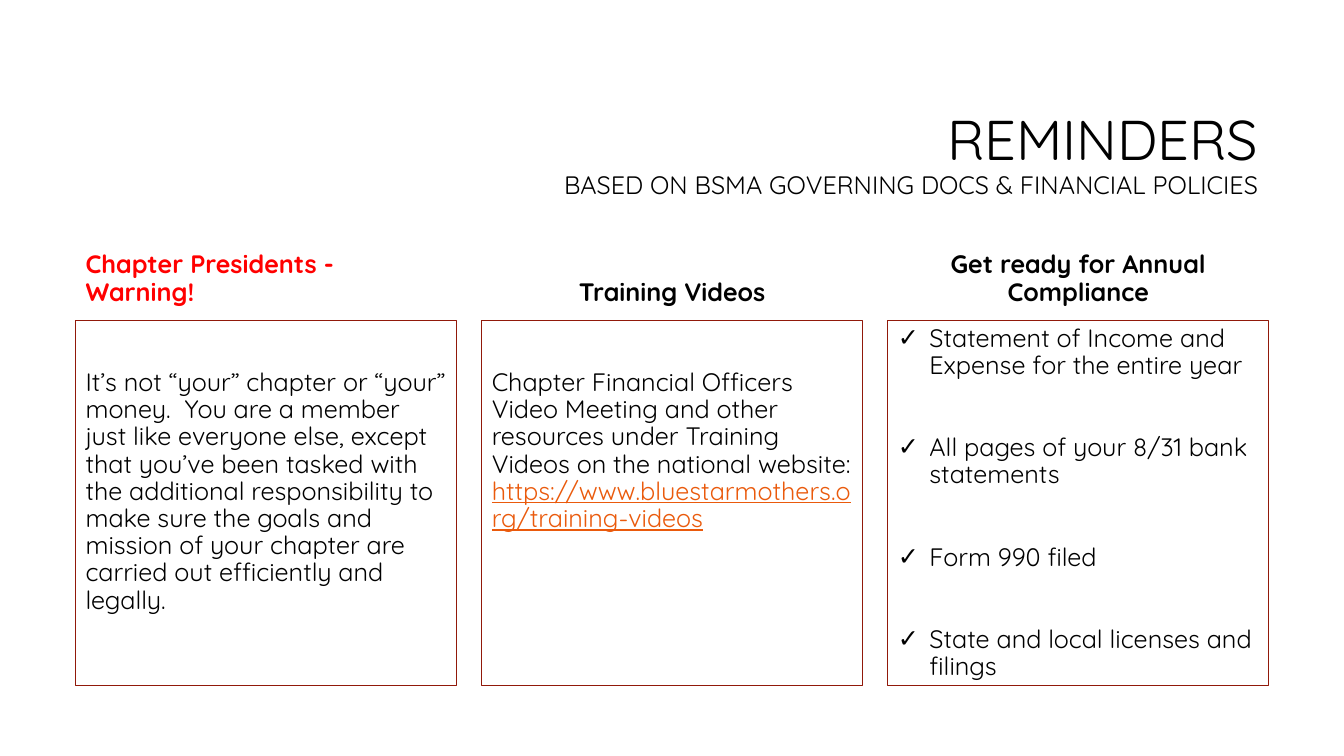
from lxml.etree import SubElement
from pptx import Presentation
from pptx.dml.color import RGBColor
from pptx.enum.text import MSO_ANCHOR as Anchor, MSO_AUTO_SIZE as AutoSize, PP_ALIGN as Align
from pptx.oxml.ns import qn
from pptx.util import Pt

COLORS = {"text": "000000", "warning": "FF0000", "border": "91190A", "link": "EA5A0C"}
FONT = "Quicksand"
COLUMN_LEFT, COLUMN_WIDTH, COLUMN_GAP = 54, 272.1, 18
HEADING_TOP, HEADING_HEIGHT = 173, 49.6
PANEL_TOP, PANEL_HEIGHT = 229, 260.6
BULLET_INDENT = 22.5

COLUMNS = [
    {
        "heading": "Chapter Presidents - Warning!",
        "color": "warning",
        "align": Align.LEFT,
        "paragraphs": [
            "It’s not “your” chapter or “your” money.  You are a member just like "
            "everyone else, except that you’ve been tasked with the additional "
            "responsibility to make sure the goals and mission of your chapter are "
            "carried out efficiently and legally."
        ],
    },
    {
        "heading": "Training Videos",
        "placeholders": (1, 2),
        "paragraphs": [
            "Chapter Financial Officers Video Meeting and other resources under "
            "Training Videos on the national website: "
        ],
        "link": "https://www.bluestarmothers.org/training-videos",
    },
    {
        "heading": "Get ready for Annual Compliance",
        "placeholders": (3, 4),
        "bullet": "✓",
        "paragraphs": [
            "Statement of Income and Expense for the entire year",
            "All pages of your 8/31 bank statements",
            "Form 990 filed",
            "State and local licenses and filings",
        ],
    },
]


def rgb(name):
    """Return the named colour."""
    return RGBColor.from_string(COLORS[name])


def place(slide, index, box, anchor, top_inset=3.6):
    """Position a placeholder, or a new text box if index is None, in the box."""
    if index is None:
        shape = slide.shapes.add_textbox(0, 0, 0, 0)
    else:
        shape = slide.placeholders[index]
    shape.left, shape.top, shape.width, shape.height = map(Pt, box)
    frame = shape.text_frame
    frame.word_wrap = True
    frame.auto_size = AutoSize.NONE
    frame.vertical_anchor = anchor
    frame.margin_left = frame.margin_right = Pt(7.2)
    frame.margin_top, frame.margin_bottom = Pt(top_inset), Pt(3.6)
    return shape


def format_paragraph(paragraph, align, size=18, color="text", bold=False, bullet=None, before=0):
    """Set the bullet, spacing and font of a paragraph."""
    properties = paragraph._p.get_or_add_pPr()
    indent = Pt(BULLET_INDENT) if bullet else 0
    properties.set("marL", str(indent))
    properties.set("indent", str(-indent))
    if bullet:
        SubElement(properties, qn("a:buChar")).set("char", bullet)
    else:
        SubElement(properties, qn("a:buNone"))
    paragraph.alignment = align
    paragraph.line_spacing = 0.9
    paragraph.space_before = Pt(before)
    font = paragraph.font
    font.name, font.size, font.bold = FONT, Pt(size), bold
    font.color.rgb = rgb(color)


def add_title(slide, box):
    """Write the title and its smaller second line."""
    paragraph = place(slide, 0, box, Anchor.MIDDLE).text_frame.paragraphs[0]
    format_paragraph(paragraph, Align.RIGHT, size=40)
    paragraph.add_run().text = "REMINDERS"
    paragraph.add_line_break()
    subtitle = paragraph.add_run()
    subtitle.text = "BASED ON BSMA GOVERNING DOCS & FINANCIAL POLICIES"
    subtitle.font.size = Pt(18)


def add_heading(slide, column, index, box):
    """Write the bold heading of a column."""
    paragraph = place(slide, index, box, Anchor.BOTTOM).text_frame.paragraphs[0]
    paragraph.text = column["heading"]
    format_paragraph(paragraph, column.get("align", Align.CENTER),
                     color=column.get("color", "text"), bold=True)


def add_panel(slide, column, index, box):
    """Write the outlined text panel of a column."""
    bullet = column.get("bullet")
    panel = place(slide, index, box, Anchor.TOP, top_inset=3.6 if bullet else 35)
    panel.line.color.rgb = rgb("border")
    panel.line.width = Pt(0.75)
    frame = panel.text_frame
    for number, text in enumerate(column["paragraphs"]):
        paragraph = frame.add_paragraph() if number else frame.paragraphs[0]
        paragraph.text = text
        format_paragraph(paragraph, Align.LEFT, bullet=bullet, before=39.2 if number else 0)
    if "link" in column:
        link = frame.paragraphs[-1].add_run()
        link.text = column["link"]
        link.font.underline = True
        link.font.color.rgb = rgb("link")


def add_column(slide, column, left):
    """Place a heading and its panel at the given left edge."""
    heading, panel = column.get("placeholders", (None, None))
    add_heading(slide, column, heading, (left, HEADING_TOP, COLUMN_WIDTH, HEADING_HEIGHT))
    add_panel(slide, column, panel, (left, PANEL_TOP, COLUMN_WIDTH, PANEL_HEIGHT))


def main():
    """Build the reminders slide."""
    presentation = Presentation()
    presentation.slide_width, presentation.slide_height = Pt(960), Pt(540)
    slide = presentation.slides.add_slide(presentation.slide_layouts[4])
    add_title(slide, (228, 59.8, 678, 103))
    for number, column in enumerate(COLUMNS):
        add_column(slide, column, COLUMN_LEFT + number * (COLUMN_WIDTH + COLUMN_GAP))
    presentation.save("out.pptx")


if __name__ == "__main__":
    main()
